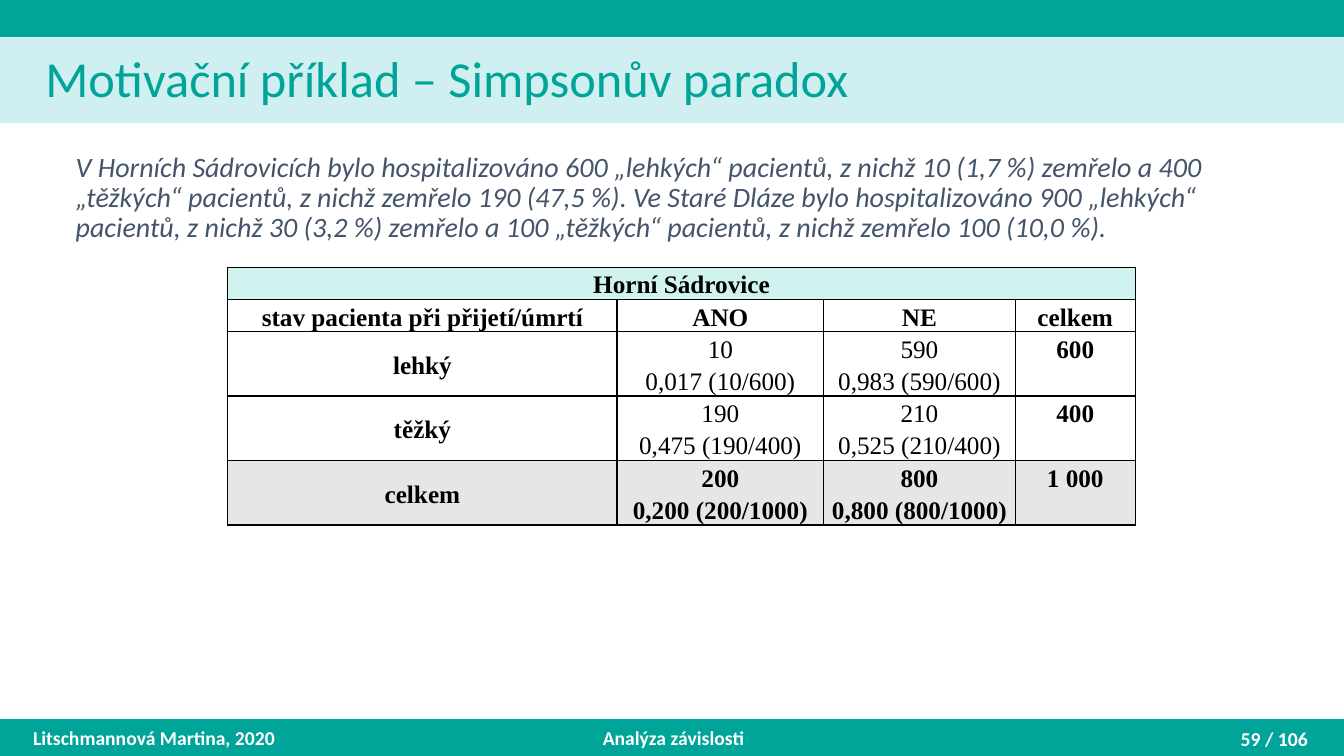
from dataclasses import dataclass

from lxml.etree import SubElement
from pptx import Presentation
from pptx.dml.color import RGBColor
from pptx.enum.shapes import MSO_SHAPE as Shape
from pptx.enum.text import MSO_ANCHOR as Anchor, MSO_AUTO_SIZE as AutoSize, PP_ALIGN as Align
from pptx.oxml.ns import qn
from pptx.util import Inches, Pt


@dataclass(frozen=True)
class Theme:
    teal: str = "00A499"
    pale_teal: str = "D0EFF0"
    table_title: str = "D1F3EF"
    total_row: str = "E7E6E6"
    body_text: str = "44546A"
    white: str = "FFFFFF"
    black: str = "000000"
    font: str = "Calibri"
    table_font: str = "Times New Roman"
    title_size: int = 36
    body_size: int = 20
    table_size: int = 18
    footer_size: int = 14


THEME = Theme()
TITLE = "Motivační příklad – Simpsonův paradox"
STORY = (
    "V Horních Sádrovicích bylo hospitalizováno 600 „lehkých“ pacientů, z nichž 10 (1,7 %) "
    "zemřelo a 400 „těžkých“ pacientů, z nichž zemřelo 190 (47,5 %). Ve Staré Dláze bylo "
    "hospitalizováno 900 „lehkých“ pacientů, z nichž 30 (3,2 %) zemřelo a 100 „těžkých“ "
    "pacientů, z nichž zemřelo 100 (10,0 %)."
)
TABLE_ROWS = [
    ["Horní Sádrovice", "", "", ""],
    ["stav pacienta při přijetí/úmrtí", "ANO", "NE", "celkem"],
    ["lehký", "10", "590", "600"],
    ["", "0,017 (10/600)", "0,983 (590/600)", ""],
    ["těžký", "190", "210", "400"],
    ["", "0,475 (190/400)", "0,525 (210/400)", ""],
    ["celkem", "200", "800", "1 000"],
    ["", "0,200 (200/1000)", "0,800 (800/1000)", ""],
]
COLUMN_WIDTHS = [3.86, 2.05, 1.9, 1.19]
ROW_HEIGHT = 0.32
FIRST_PAIR, TOTAL_PAIR = 2, 6


def write(paragraph, text, size, color, font=THEME.font, bold=False, italic=False):
    run = paragraph.add_run()
    run.text = text
    run.font.name, run.font.size = font, Pt(size)
    run.font.bold, run.font.italic = bold, italic
    run.font.color.rgb = RGBColor.from_string(color)


def add_band(slide, box, color, line_width, depth):
    band = slide.shapes.add_shape(Shape.RECTANGLE, *map(Inches, box))
    band.shadow.inherit = False
    band.fill.solid()
    band.fill.fore_color.rgb = band.line.color.rgb = RGBColor.from_string(color)
    band.line.width = Pt(line_width)
    # Bands lie behind the placeholders, after the two group property elements
    slide.shapes._spTree.insert(2 + depth, band._element)


def fill_placeholder(placeholder, box, anchor, text, size, color, italic=False):
    placeholder.left, placeholder.top, placeholder.width, placeholder.height = map(Inches, box)
    frame = placeholder.text_frame
    frame.word_wrap, frame.auto_size, frame.vertical_anchor = True, AutoSize.NONE, anchor
    paragraph = frame.paragraphs[0]
    properties = paragraph._p.get_or_add_pPr()
    properties.set("marL", "0")
    properties.set("indent", "0")
    SubElement(properties, qn("a:buNone"))
    paragraph.alignment = Align.LEFT
    paragraph.line_spacing, paragraph.space_before = 0.9, Pt(0)
    write(paragraph, text, size, color, italic=italic)


def add_footer_text(slide, box, text, alignment):
    frame = slide.shapes.add_textbox(*map(Inches, box)).text_frame
    frame.word_wrap, frame.vertical_anchor = True, Anchor.MIDDLE
    frame.paragraphs[0].alignment = alignment
    write(frame.paragraphs[0], text, THEME.footer_size, THEME.white, bold=True)


def set_borders(cell, hidden_side):
    properties = cell._tc.get_or_add_tcPr()
    for side in ("lnL", "lnR", "lnT", "lnB"):
        line = SubElement(properties, qn(f"a:{side}"), w=str(Pt(1)))
        if side == hidden_side:
            SubElement(line, qn("a:noFill"))
        else:
            SubElement(SubElement(line, qn("a:solidFill")), qn("a:srgbClr"), val=THEME.black)


def format_cell(cell, row, column, text):
    # The two rows of a pair share a box, so the edge between them is hidden
    in_pair = row >= FIRST_PAIR and column > 0
    lower = (row - FIRST_PAIR) % 2 == 1
    set_borders(cell, ("lnT" if lower else "lnB") if in_pair else None)
    if row == 0 or row >= TOTAL_PAIR:
        cell.fill.solid()
        color = THEME.table_title if row == 0 else THEME.total_row
        cell.fill.fore_color.rgb = RGBColor.from_string(color)
    else:
        cell.fill.background()
    cell.margin_left = cell.margin_right = Inches(0.05)
    cell.margin_top = cell.margin_bottom = 0
    cell.vertical_anchor = Anchor.MIDDLE
    paragraph = cell.text_frame.paragraphs[0]
    paragraph.alignment, paragraph.line_spacing = Align.CENTER, 1.15
    if text:
        regular = FIRST_PAIR <= row < TOTAL_PAIR and column in (1, 2)
        write(paragraph, text, THEME.table_size, THEME.black, THEME.table_font, bold=not regular)
    else:
        paragraph.font.size = Pt(THEME.footer_size)


def add_patient_table(slide, left, top):
    height = ROW_HEIGHT * len(TABLE_ROWS)
    table = slide.shapes.add_table(
        len(TABLE_ROWS), len(COLUMN_WIDTHS),
        *map(Inches, (left, top, sum(COLUMN_WIDTHS), height)),
    ).table
    table.first_row = table.horz_banding = False
    for column, width in zip(table.columns, COLUMN_WIDTHS):
        column.width = Inches(width)
    for row, texts in enumerate(TABLE_ROWS):
        table.rows[row].height = Inches(ROW_HEIGHT)
        for column, text in enumerate(texts):
            format_cell(table.cell(row, column), row, column, text)
    table.cell(0, 0).merge(table.cell(0, len(COLUMN_WIDTHS) - 1))
    for row in range(FIRST_PAIR, len(TABLE_ROWS), 2):
        table.cell(row, 0).merge(table.cell(row + 1, 0))


def add_header(slide, left, top, width):
    bar, strip = 0.36, 0.86
    add_band(slide, (left + 0.01, top + bar, width, strip), THEME.pale_teal, 0.75, 0)
    add_band(slide, (left, top, width, bar), THEME.teal, 1, 1)
    fill_placeholder(slide.shapes.title, (left + 0.35, top + 0.4, 11.88, 0.81),
                     Anchor.MIDDLE, TITLE, THEME.title_size, THEME.teal)


def add_content(slide, left, top):
    fill_placeholder(slide.placeholders[1], (left, top, 12.17, 5.88),
                     Anchor.TOP, STORY, THEME.body_size, THEME.body_text, italic=True)
    add_patient_table(slide, left + 1.61, top + 1.18)


def add_footer(slide, left, top, width, height):
    add_band(slide, (left, top, width, height), THEME.teal, 1, 0)
    for offset, drop, text_width, text, alignment in [
        (0.23, 0, 3, "Litschmannová Martina, 2020", Align.LEFT),
        (4.43, 0, 4.5, "Analýza závislosti", Align.CENTER),
        (10.07, 0.01, 3, "59 / 106", Align.RIGHT),
    ]:
        add_footer_text(slide, (left + offset, top + drop, text_width, height), text, alignment)


def main():
    presentation = Presentation()
    presentation.slide_width, presentation.slide_height = Inches(13.33), Inches(7.5)
    slide = presentation.slides.add_slide(presentation.slide_layouts[1])
    add_header(slide, 0, 0, 13.33)
    add_content(slide, 0.65, 1.47)
    add_footer(slide, 0, 7.14, 13.33, 0.36)
    presentation.save("out.pptx")


if __name__ == "__main__":
    main()
